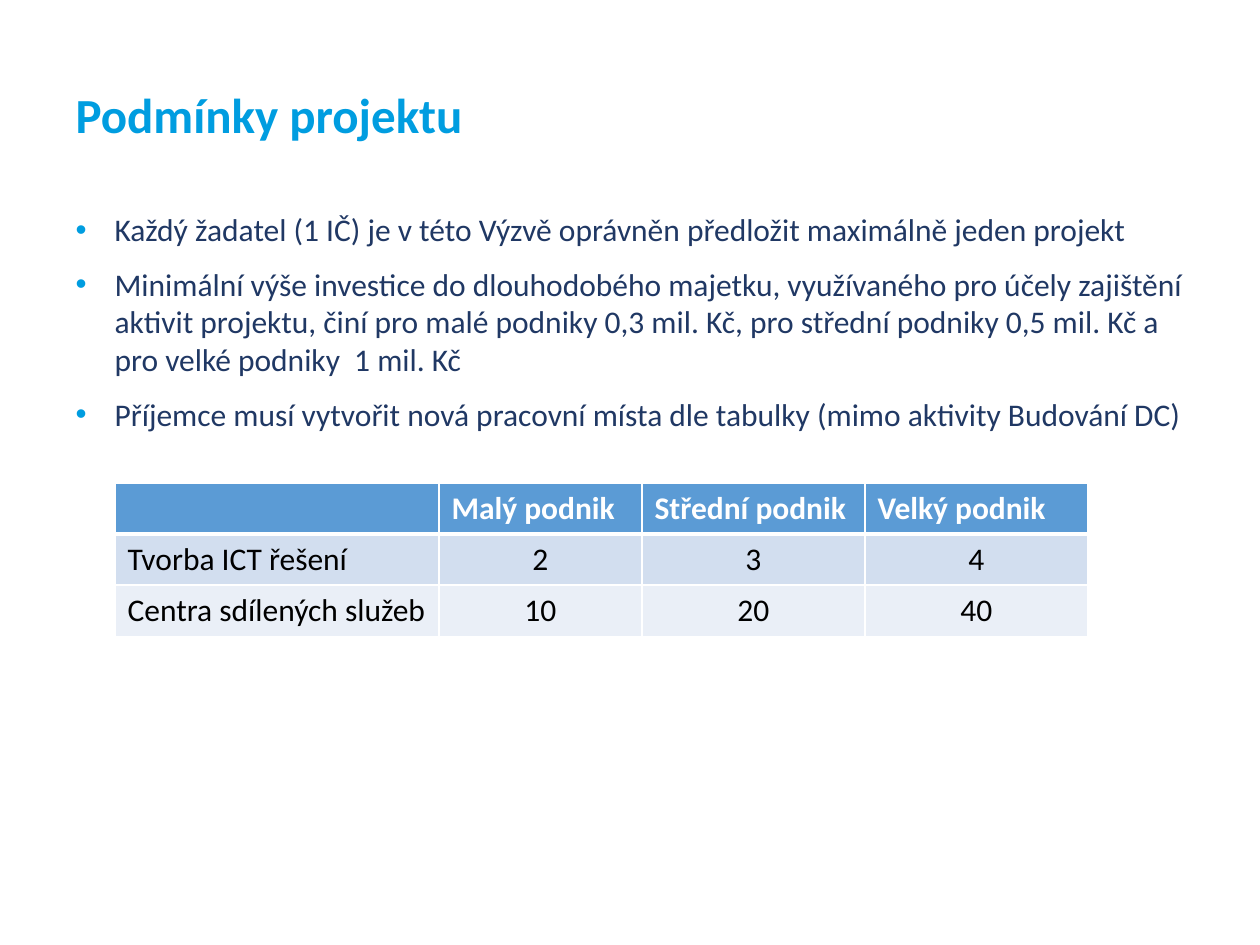
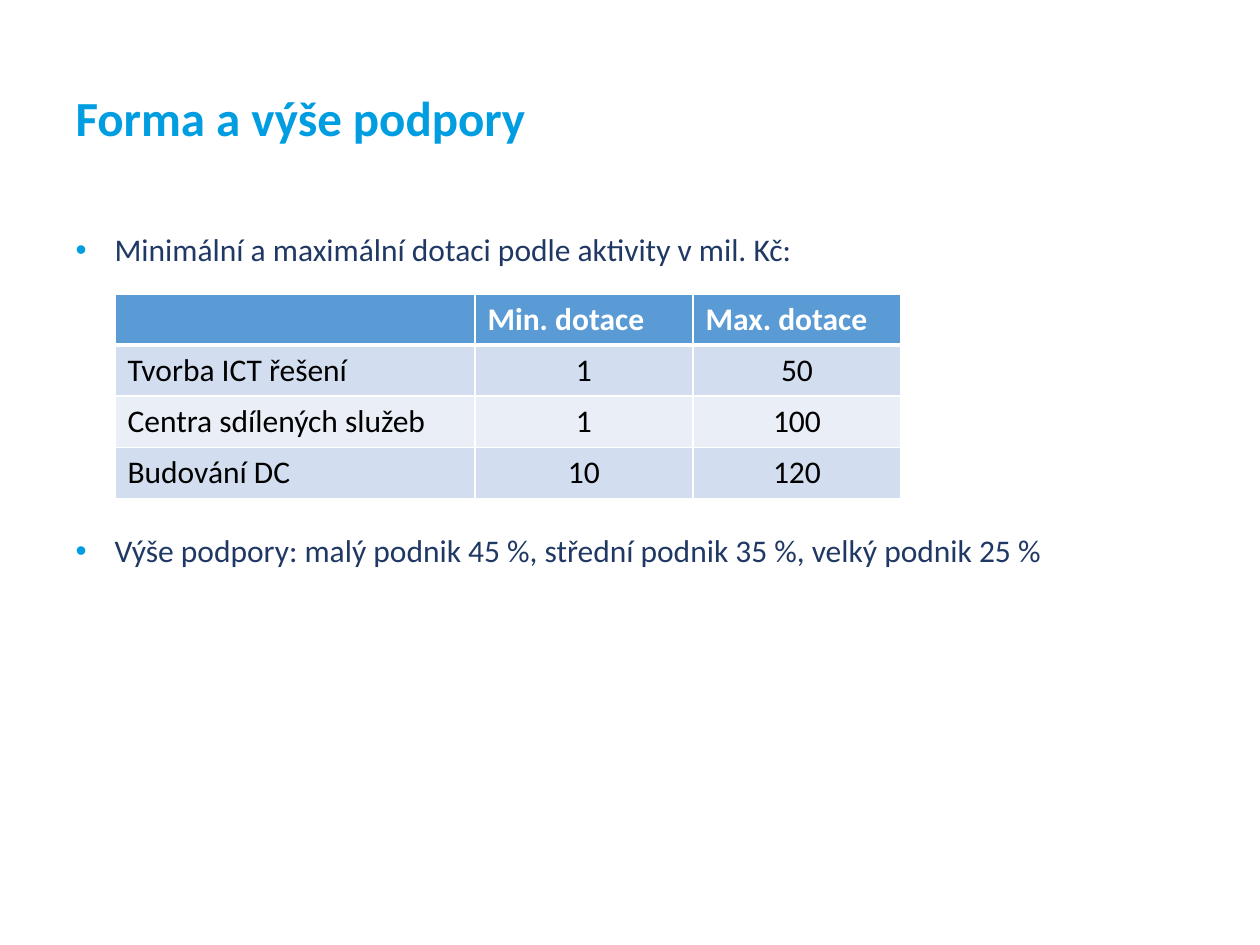
from lxml.etree import SubElement
from pptx import Presentation
from pptx.dml.color import RGBColor
from pptx.enum.text import MSO_ANCHOR as Anchor, MSO_AUTO_SIZE as AutoSize, PP_ALIGN as Align
from pptx.oxml import parse_xml
from pptx.oxml.ns import nsdecls, qn
from pptx.util import Inches, Pt

SCALE = Inches(10) / 1260
FONT = "Calibri"
COLORS = {
    "accent": "009DE0",
    "body": "203864",
    "header": "5B9BD5",
    "odd": "D2DEEF",
    "even": "EAEFF7",
    "white": "FFFFFF",
    "black": "000000",
}
LEFT, WIDTH, INDENT, ROW_HEIGHT = 63, 1134, 39, 51
TABLE_LEFT = 115


def px(length):
    """Turn whole px into EMU."""
    return round(length * SCALE)


def write(para, text, size=18, color="body", bold=False, align=Align.LEFT, before=0, after=0):
    """Put formatted text into a paragraph."""
    para.alignment = align
    para.space_before, para.space_after = Pt(before), Pt(after)
    span = para.add_run()
    span.text = text
    span.font.name, span.font.size, span.font.bold = FONT, Pt(size), bold
    span.font.color.rgb = RGBColor.from_string(COLORS[color])


def place(shape, box):
    """Move a placeholder to its box and ready its text frame."""
    shape.left, shape.top, shape.width, shape.height = map(px, box)
    frame = shape.text_frame
    frame.word_wrap, frame.auto_size = True, AutoSize.NONE
    return frame


def add_bullet(para):
    """Give a paragraph a coloured bullet and a hanging indent."""
    props = para._p.get_or_add_pPr()
    props.set("marL", str(px(INDENT)))
    props.set("indent", str(-px(INDENT)))
    color = SubElement(props, qn("a:buClr"))
    SubElement(color, qn("a:srgbClr"), val=COLORS["accent"])
    SubElement(props, qn("a:buFont"), typeface="Arial")
    SubElement(props, qn("a:buChar"), char="•")


def fill_title(page, text, box):
    """Fill the title placeholder."""
    frame = place(page.shapes.title, box)
    frame.vertical_anchor = Anchor.MIDDLE
    write(frame.paragraphs[0], text, size=28, color="accent", bold=True)


def fill_list(page, items, box, before, after):
    """Fill the body placeholder with bulleted items."""
    frame = place(page.placeholders[1], box)
    frame.vertical_anchor = Anchor.TOP
    for index, text in enumerate(items):
        para = frame.add_paragraph() if index else frame.paragraphs[0]
        add_bullet(para)
        write(para, text, before=before if index else 0, after=after)


def set_borders(cell, top, bottom):
    """Draw white cell borders; top and bottom widths are in points."""
    props = cell._tc.get_or_add_tcPr()
    widths = {"lnL": 1, "lnR": 1, "lnT": top, "lnB": bottom}
    for index, (side, width) in enumerate(widths.items()):
        props.insert(index, parse_xml(
            f'<a:{side} {nsdecls("a")} w="{Pt(width)}"><a:solidFill>'
            f'<a:srgbClr val="{COLORS["white"]}"/></a:solidFill></a:{side}>'))


def add_grid(page, rows, columns, left, top):
    """Add a banded table with a header row and centred values."""
    table = page.shapes.add_table(
        len(rows), len(columns), px(left), px(top),
        px(sum(columns)), px(ROW_HEIGHT * len(rows))).table
    for column, width in zip(table.columns, columns):
        column.width = px(width)
    for r, texts in enumerate(rows):
        table.rows[r].height = px(ROW_HEIGHT)
        band = "header" if r == 0 else "odd" if r % 2 else "even"
        for c, text in enumerate(texts):
            cell = table.cell(r, c)
            cell.fill.solid()
            cell.fill.fore_color.rgb = RGBColor.from_string(COLORS[band])
            set_borders(cell, top=3 if r == 1 else 1, bottom=3 if r == 0 else 1)
            if text:
                write(cell.text_frame.paragraphs[0], text,
                      color="black" if r else "white", bold=r == 0,
                      align=Align.CENTER if r and c else Align.LEFT)
            if r and c:
                cell.vertical_anchor = Anchor.MIDDLE


def build_conditions(page):
    """Build the slide on project conditions."""
    fill_title(page, "Podmínky projektu", (LEFT, 55, WIDTH, 117))
    fill_list(page, [
        "Každý žadatel (1 IČ) je v této Výzvě oprávněn předložit maximálně jeden projekt",
        "Minimální výše investice do dlouhodobého majetku, využívaného pro účely zajištění "
        "aktivit projektu, činí pro malé podniky 0,3 mil. Kč, pro střední podniky "
        "0,5 mil. Kč a pro velké podniky  1 mil. Kč",
        "Příjemce musí vytvořit nová pracovní místa dle tabulky (mimo aktivity Budování DC)",
    ], (LEFT, 204, WIDTH, 640), before=3.5, after=6)
    add_grid(page, [
        ("", "Malý podnik", "Střední podnik", "Velký podnik"),
        ("Tvorba ICT řešení", "2", "3", "4"),
        ("Centra sdílených služeb", "10", "20", "40"),
    ], (324, 203, 223, 223), TABLE_LEFT, 483)


def build_support(page):
    """Build the slide on the form and amount of support."""
    fill_title(page, "Forma a výše podpory", (LEFT, 38, WIDTH, 158))
    fill_list(page, [
        "Minimální a maximální dotaci podle aktivity v mil. Kč:",
        "Výše podpory: malý podnik 45 %, střední podnik 35 %, velký podnik 25 %",
    ], (LEFT, 224, WIDTH, 602), before=132.5, after=18)
    add_grid(page, [
        ("", "Min. dotace", "Max. dotace"),
        ("Tvorba ICT řešení", "1", "50"),
        ("Centra sdílených služeb", "1", "100"),
        ("Budování DC", "10", "120"),
    ], (360, 218, 208), TABLE_LEFT, 294)


def main():
    """Build and save the deck."""
    deck = Presentation()
    deck.slide_width, deck.slide_height = px(1260), px(945)
    for build in (build_conditions, build_support):
        build(deck.slides.add_slide(deck.slide_layouts[1]))
    deck.save("out.pptx")


if __name__ == "__main__":
    main()
